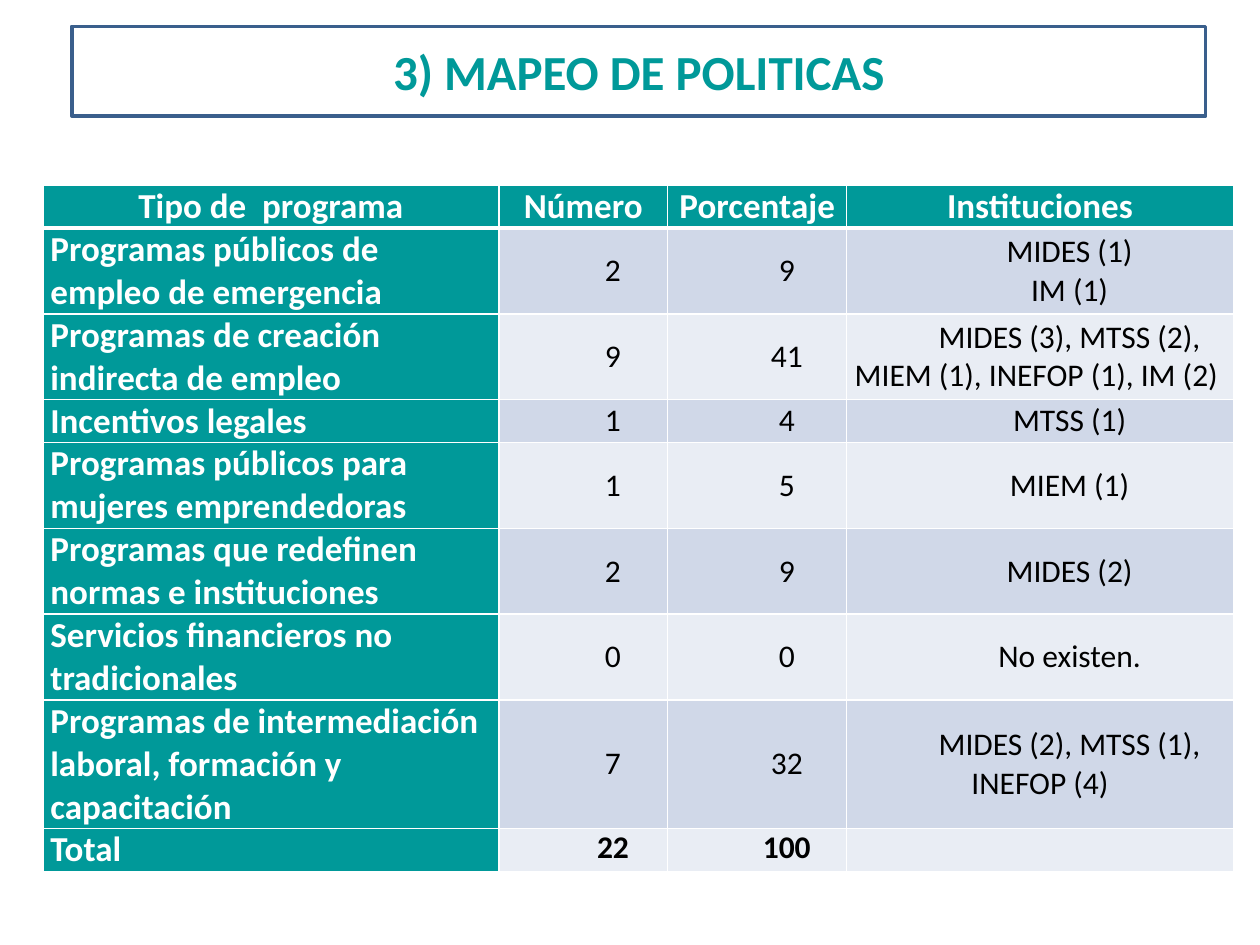
"""Build the policy mapping slide with its programme table."""
from dataclasses import dataclass

from lxml import etree
from pptx import Presentation
from pptx import util as u
from pptx.dml.color import RGBColor
from pptx.enum import shapes, text
from pptx.oxml.ns import qn

TITLE = "3) MAPEO DE POLITICAS"
HEADERS = ["Tipo de  programa", "Número", "Porcentaje", "Instituciones"]
PROGRAMS = [
    ("Programas públicos de empleo de emergencia", "2", "9", "MIDES (1)\nIM (1)"),
    ("Programas de creación indirecta de empleo", "9", "41",
     "MIDES (3), MTSS (2), MIEM (1), INEFOP (1), IM (2) "),
    ("Incentivos legales", "1", "4", "MTSS (1)"),
    ("Programas públicos para mujeres emprendedoras", "1", "5", "MIEM (1)"),
    ("Programas que redefinen normas e instituciones", "2", "9", "MIDES (2)"),
    ("Servicios financieros no tradicionales", "0", "0", "No existen."),
    ("Programas de intermediación laboral, formación y capacitación", "7", "32",
     "MIDES (2), MTSS (1), INEFOP (4)"),
    ("Total", "22", "100", ""),
]
COL_WIDTHS = [3.62, 1.34, 1.42, 3.07]
ROW_LINES = [1, 2, 2, 1, 2, 2, 2, 3, 1]
LINE_HEIGHT = 0.34
FIRST_LINE_INDENT = 0.47


@dataclass(frozen=True)
class Theme:
    font: str = "Calibri"
    teal: str = "009999"
    white: str = "FFFFFF"
    black: str = "000000"
    outline: str = "3A5F8C"
    bands: tuple = ("E9EDF4", "D0D8E8")
    title_size: int = 28
    label_size: int = 20
    value_size: int = 18


THEME = Theme()


def style_font(p, size, color, bold):
    p.font.name = THEME.font
    p.font.size = u.Pt(size)
    p.font.bold = bold
    p.font.color.rgb = RGBColor.from_string(color)


def set_borders(cell, bottom):
    tc_pr = cell._tc.get_or_add_tcPr()
    for side, width in (("L", 1), ("R", 1), ("T", 1), ("B", bottom)):
        ln = etree.SubElement(tc_pr, qn(f"a:ln{side}"), w=str(u.Pt(width)))
        fill = etree.SubElement(ln, qn("a:solidFill"))
        etree.SubElement(fill, qn("a:srgbClr"), val=THEME.white)


def add_title(slide):
    sp = slide.shapes.add_shape(shapes.MSO_SHAPE.RECTANGLE, u.Inches(0.57),
                                u.Inches(0.21), u.Inches(9), u.Inches(0.71))
    sp.shadow.inherit = False
    sp.fill.background()
    sp.line.color.rgb = RGBColor.from_string(THEME.outline)
    sp.line.width = u.Pt(2)
    tf = sp.text_frame
    tf.text = TITLE
    tf.vertical_anchor = text.MSO_ANCHOR.MIDDLE
    p = tf.paragraphs[0]
    p.alignment = text.PP_ALIGN.CENTER
    style_font(p, THEME.title_size, THEME.teal, True)


def fill_cell(cell, content, row, col):
    header, total = row == 0, row == len(PROGRAMS)
    label = header or col == 0
    set_borders(cell, 3 if header else 1)
    cell.fill.solid()
    cell.fill.fore_color.rgb = RGBColor.from_string(
        THEME.teal if label else THEME.bands[row % 2])
    cell.margin_left = cell.margin_right = u.Inches(0.06)
    cell.margin_top = cell.margin_bottom = 0
    middle = not label and not total
    cell.vertical_anchor = text.MSO_ANCHOR.MIDDLE if middle else text.MSO_ANCHOR.TOP
    cell.text = content
    for p in cell.text_frame.paragraphs:
        p.alignment = (text.PP_ALIGN.LEFT if col == 0 and not header
                       else text.PP_ALIGN.CENTER)
        if label:
            p.space_before, p.space_after = u.Pt(12), u.Pt(6)
            style_font(p, THEME.label_size, THEME.white, True)
        else:
            p._p.get_or_add_pPr().set("indent", str(u.Inches(FIRST_LINE_INDENT)))
            style_font(p, THEME.value_size, THEME.black, total)


def add_program_table(slide):
    rows = [HEADERS, *PROGRAMS]
    table = slide.shapes.add_table(
        len(rows), len(HEADERS), u.Inches(0.34), u.Inches(1.47),
        u.Inches(sum(COL_WIDTHS)), u.Inches(LINE_HEIGHT * sum(ROW_LINES))).table
    for column, width in zip(table.columns, COL_WIDTHS):
        column.width = u.Inches(width)
    for r, (values, lines) in enumerate(zip(rows, ROW_LINES)):
        table.rows[r].height = u.Inches(LINE_HEIGHT * lines)
        for c, content in enumerate(values):
            fill_cell(table.cell(r, c), content, r, c)


def main():
    prs = Presentation()
    prs.slide_width, prs.slide_height = u.Inches(10), u.Inches(7.5)
    slide = prs.slides.add_slide(prs.slide_layouts[6])
    add_title(slide)
    add_program_table(slide)
    prs.save("out.pptx")


if __name__ == "__main__":
    main()
